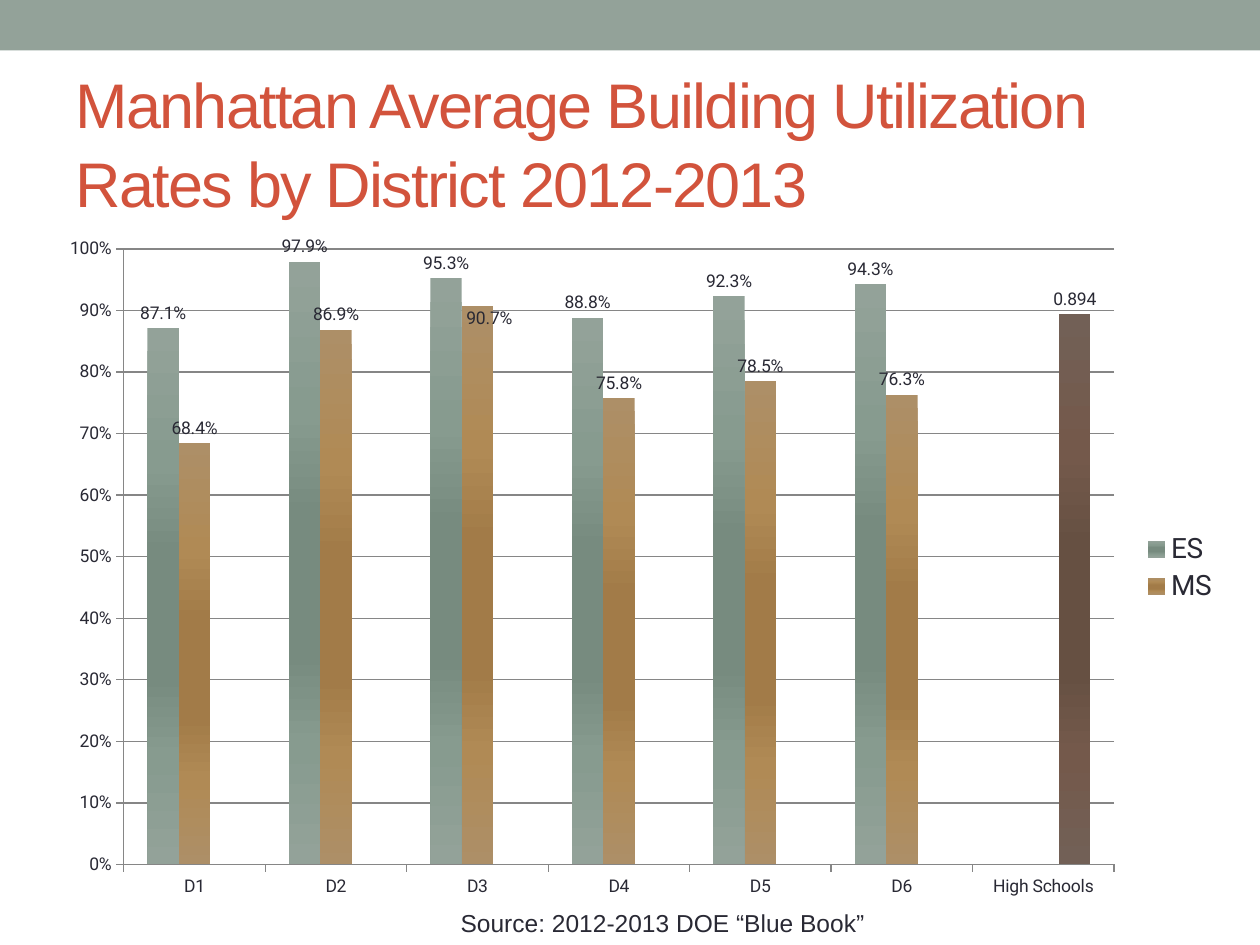
from dataclasses import dataclass

from lxml import etree
from pptx import Presentation
from pptx.chart.data import CategoryChartData
from pptx.dml.color import RGBColor
from pptx.enum.chart import XL_CHART_TYPE, XL_LABEL_POSITION, XL_LEGEND_POSITION, XL_TICK_MARK
from pptx.enum.shapes import MSO_SHAPE
from pptx.enum.text import MSO_ANCHOR, PP_ALIGN
from pptx.oxml import parse_xml
from pptx.oxml.ns import qn
from pptx.util import Cm, Pt

CLUSTERED = XL_CHART_TYPE.COLUMN_CLUSTERED
OUTSIDE_END = XL_LABEL_POSITION.OUTSIDE_END
LEGEND_RIGHT = XL_LEGEND_POSITION.RIGHT
TICK_OUTSIDE = XL_TICK_MARK.OUTSIDE
TICK_NONE = XL_TICK_MARK.NONE
RECTANGLE = MSO_SHAPE.RECTANGLE
MIDDLE, TOP = MSO_ANCHOR.MIDDLE, MSO_ANCHOR.TOP
LEFT, CENTER = PP_ALIGN.LEFT, PP_ALIGN.CENTER
CHART_NS = 'xmlns:c="http://schemas.openxmlformats.org/drawingml/2006/chart"'
DRAWING_NS = 'xmlns:a="http://schemas.openxmlformats.org/drawingml/2006/main"'


@dataclass(frozen=True)
class Theme:
    band: str = "93A299"
    title: str = "D2533C"
    text: str = "292934"
    grid: str = "868686"
    body_font: str = "Arial"
    chart_font: str = "Roboto"
    title_size: int = 36
    source_size: int = 14
    legend_size: int = 16
    chart_size: int = 10
    bars: tuple = (
        ("93A299", "879B8F", "778B7F"),
        ("AD8F67", "B08A55", "A27B48"),
        ("726056", "74594B", "665042"),
    )


theme = Theme()


def write_text(frame, text, size, color, align=LEFT, anchor=TOP, line_spacing=1.0, tracking=0):
    frame.word_wrap = True
    frame.vertical_anchor = anchor
    paragraph = frame.paragraphs[0]
    paragraph.alignment = align
    paragraph.line_spacing = line_spacing
    run = paragraph.add_run()
    run.text = text
    run.font.name = theme.body_font
    run.font.size = Pt(size)
    run.font.color.rgb = RGBColor.from_string(color)
    if tracking:
        run.font._element.set("spc", str(tracking * 100))


def manual_layout(**values):
    parts = "".join(f'<c:{name} val="{value}"/>' for name, value in values.items())
    return parse_xml(f"<c:layout {CHART_NS}><c:manualLayout>{parts}</c:manualLayout></c:layout>")


presentation = Presentation()
presentation.slide_width = Cm(25.4)
presentation.slide_height = Cm(19.05)
slide = presentation.slides.add_slide(presentation.slide_layouts[5])

band = slide.shapes.add_shape(RECTANGLE, 0, 0, presentation.slide_width, Cm(1.02))
band.shadow.inherit = False
band.fill.solid()
band.fill.fore_color.rgb = RGBColor.from_string(theme.band)
band.line.fill.background()

title = slide.shapes.title
title.left, title.top, title.width, title.height = Cm(1.27), Cm(1.47), Cm(22.86), Cm(2.74)
write_text(
    title.text_frame,
    "Manhattan Average Building Utilization Rates by District 2012-2013",
    theme.title_size, theme.title, anchor=MIDDLE, line_spacing=1.05, tracking=-1,
)

data = CategoryChartData()
data.categories = ["D1", "D2", "D3", "D4", "D5", "D6", "High Schools"]
data.add_series("ES", [0.871, 0.979, 0.953, 0.888, 0.923, 0.943, None])
data.add_series("MS", [0.684, 0.869, 0.907, 0.758, 0.785, 0.763, None])
data.add_series("Series 3", [None] * 6 + [0.894])
chart = slide.shapes.add_chart(CLUSTERED, Cm(0.97), Cm(4.55), Cm(23.85), Cm(13.79), data).chart
chart.has_title = False
chart.font.name = theme.chart_font
chart.font.size = Pt(theme.chart_size)
chart.font.color.rgb = RGBColor.from_string(theme.text)

plot = chart.plots[0]
plot.vary_by_categories = False
plot.gap_width = 150
plot.overlap = 0
for series, (light, medium, dark), number_format in zip(
    plot.series, theme.bars, ("0.0%", "0.0%", "General")
):
    stops = zip((0, 25, 42, 65, 80, 100), (light, medium, dark, dark, medium, light))
    gradient = "".join(
        f'<a:gs pos="{position * 1000}"><a:srgbClr val="{color}"/></a:gs>' for position, color in stops
    )
    series.invert_if_negative = False
    series.format.line.fill.background()
    series.format.line._ln.addprevious(parse_xml(
        f'<a:gradFill {DRAWING_NS} rotWithShape="1"><a:gsLst>{gradient}</a:gsLst>'
        '<a:lin ang="5400000" scaled="0"/></a:gradFill>'
    ))
    labels = series.data_labels
    labels.show_value = True
    labels.number_format = number_format
    labels.number_format_is_linked = False
    labels.position = OUTSIDE_END

moved_label = plot.series[1].points[2].data_label
moved_label.position = OUTSIDE_END
label_element = moved_label._dLbl
label_layout = manual_layout(x=0.01, y=0.04)
label_element.find(qn("c:idx")).addnext(label_layout)
label_layout.addnext(parse_xml(f'<c:numFmt {CHART_NS} formatCode="0.0%" sourceLinked="0"/>'))

value_axis = chart.value_axis
value_axis.minimum_scale = 0
value_axis.maximum_scale = 1
value_axis.major_unit = 0.1
value_axis.has_major_gridlines = True
value_axis.tick_labels.number_format = "0%"
value_axis.tick_labels.number_format_is_linked = False
for axis in (value_axis, chart.category_axis):
    axis.major_tick_mark = TICK_OUTSIDE
    axis.minor_tick_mark = TICK_NONE
for line in (value_axis.format.line, chart.category_axis.format.line, value_axis.major_gridlines.format.line):
    line.width = Pt(0.75)
    line.color.rgb = RGBColor.from_string(theme.grid)

chart.has_legend = True
legend = chart.legend
legend.position = LEGEND_RIGHT
legend.include_in_layout = False
legend.font.size = Pt(theme.legend_size)
legend.font.name = theme.chart_font
legend.font.color.rgb = RGBColor.from_string(theme.text)
hidden_entry = etree.Element(qn("c:legendEntry"))
etree.SubElement(hidden_entry, qn("c:idx")).set("val", "2")
etree.SubElement(hidden_entry, qn("c:delete")).set("val", "1")
legend._element.find(qn("c:legendPos")).addnext(hidden_entry)

plot_area = plot._element.getparent()
for layout in plot_area.findall(qn("c:layout")):
    plot_area.remove(layout)
plot_area.insert(0, manual_layout(
    layoutTarget="inner", xMode="edge", yMode="edge", x=0.064, y=0.034, w=0.837, h=0.9
))

source = slide.shapes.add_textbox(Cm(1.32), Cm(18.19), Cm(24.08), Cm(0.86))
write_text(
    source.text_frame, "Source: 2012-2013 DOE “Blue Book”",
    theme.source_size, theme.text, align=CENTER,
)

presentation.save("out.pptx")
